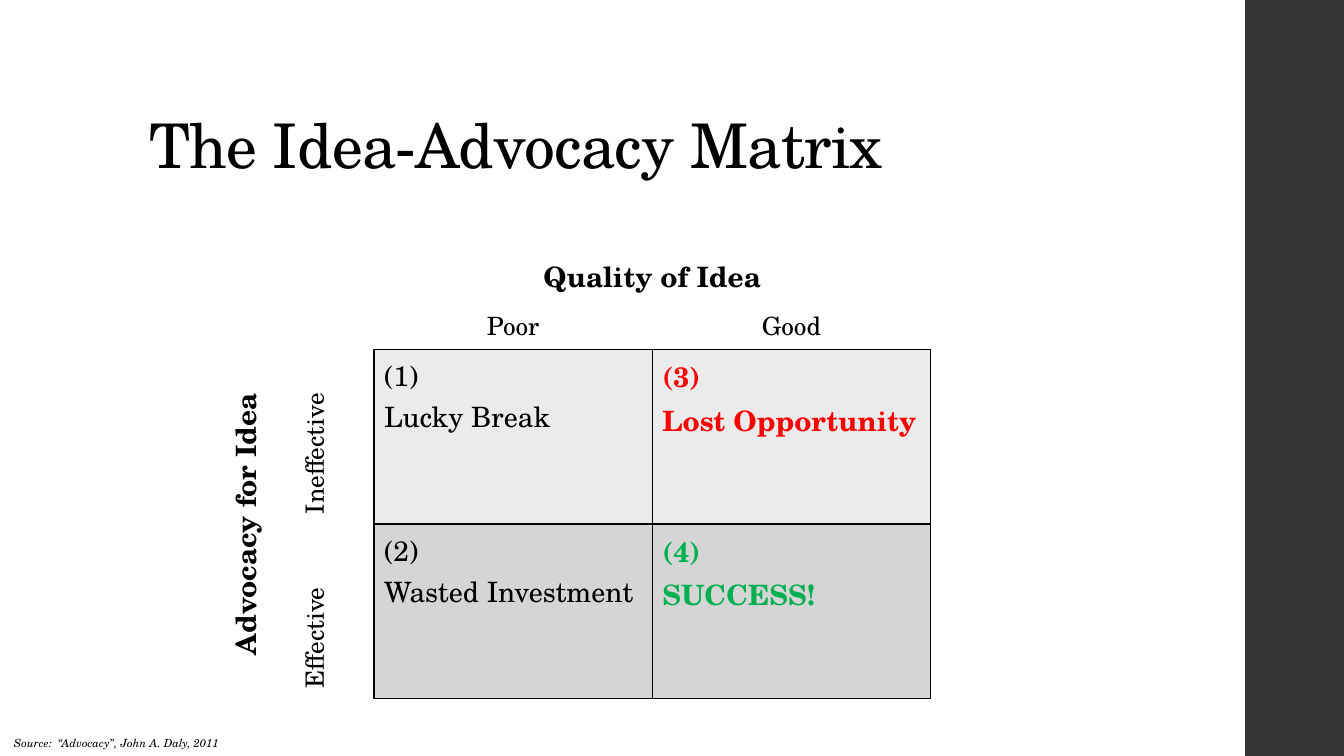
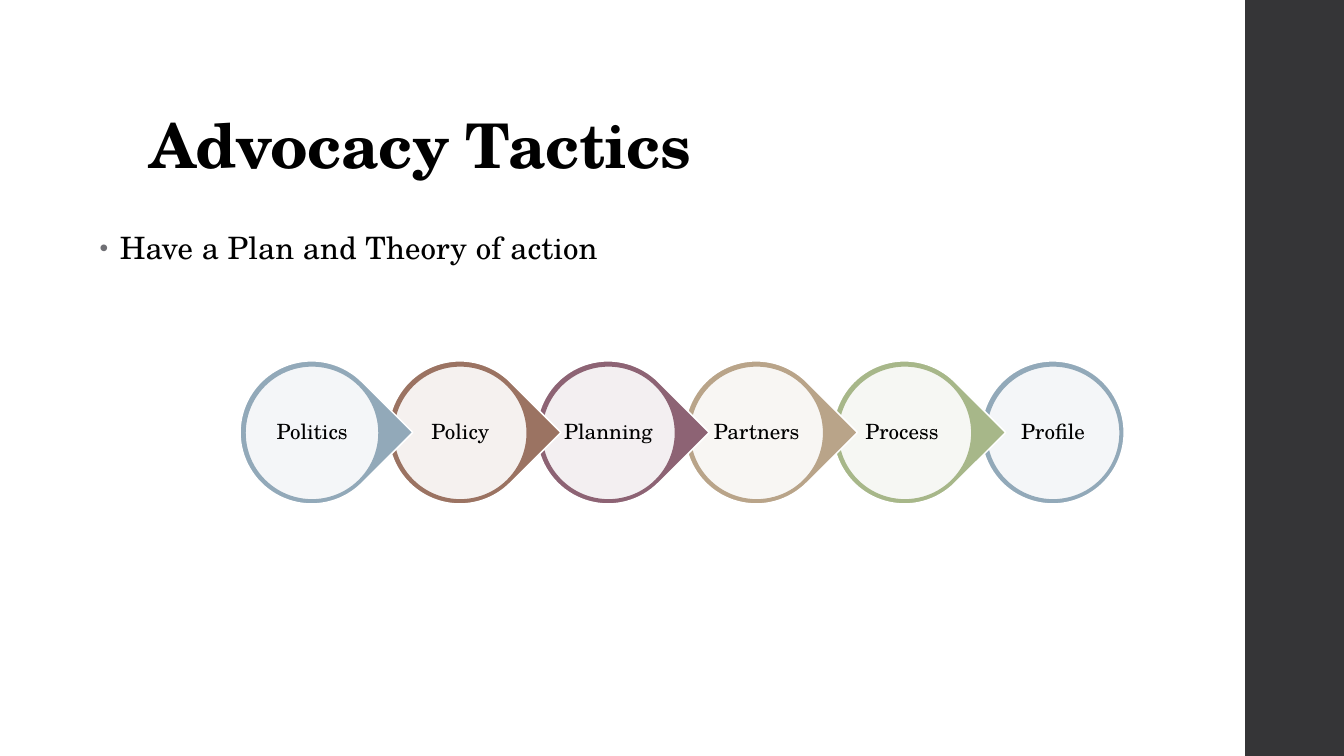
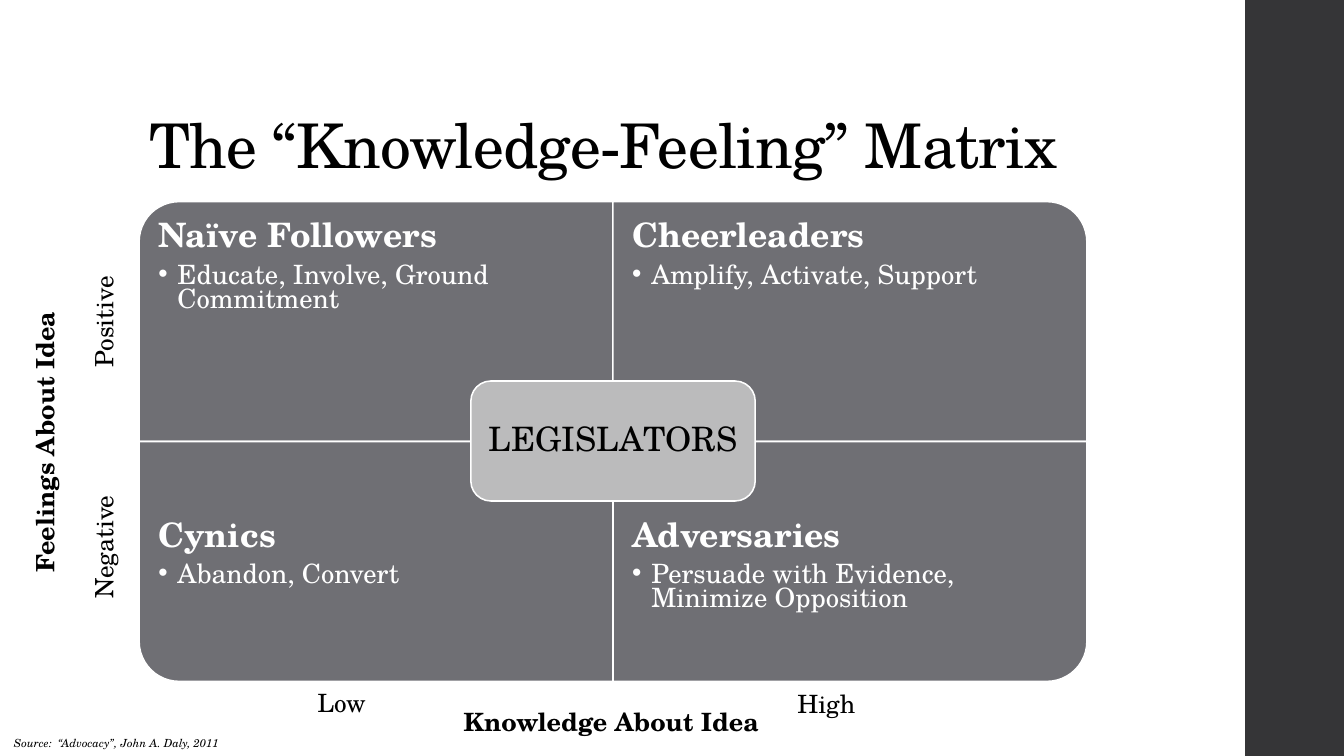
from pptx import Presentation
from pptx.dml.color import RGBColor
from pptx.enum.shapes import MSO_SHAPE as Preset
from pptx.enum.text import MSO_ANCHOR as Anchor, MSO_AUTO_SIZE as AutoSize, PP_ALIGN as Align
from pptx.oxml.ns import qn
from pptx.util import Inches, Pt
from lxml.etree import SubElement

FONT = "TeX Gyre Schola"
BLACK, WHITE, RED, GREEN = "000000", "FFFFFF", "FF0000", "00B050"
BAND, SLATE, SILVER = "353537", "6F6F74", "BBBBBC"
PALE_ROW, DARK_ROW = "EBEBEB", "D5D5D6"
BLUE, BROWN, PLUM, TAN, OLIVE = "92A9B9", "9B7362", "8D6374", "B9A489", "A7B789"
TITLE_BOX = (1.38, 0.4, 10.6, 1.45)
SOURCE_BOX = (0.04, 7.26, 2.27, 0.24)


def colour(value):
    return RGBColor.from_string(value)


def lengths(box):
    return [Inches(value) for value in box]


def add_span(para, text, size, ink=BLACK, bold=False, italic=False, tracking=0):
    span = para.add_run()
    span.text = text
    span.font.name = FONT
    span.font.size = Pt(size)
    span.font.bold = bold
    span.font.italic = italic
    span.font.color.rgb = colour(ink)
    if tracking:
        span._r.get_or_add_rPr().set("spc", str(round(tracking * 100)))
    return span


def add_bullet(para, indent, ink, percent=100):
    props = para._p.get_or_add_pPr()
    props.set("marL", str(Inches(indent)))
    props.set("indent", str(-Inches(indent)))
    SubElement(SubElement(props, qn("a:buClr")), qn("a:srgbClr"), val=ink)
    SubElement(props, qn("a:buSzPct"), val=str(percent * 1000))
    SubElement(props, qn("a:buFont"), typeface="Arial")
    SubElement(props, qn("a:buChar"), char="•")


def add_frame(page, box, anchor=Anchor.TOP, insets=(0.1, 0.05)):
    frame = page.shapes.add_textbox(*lengths(box)).text_frame
    frame.word_wrap = True
    frame.vertical_anchor = anchor
    frame.margin_left = frame.margin_right = Inches(insets[0])
    frame.margin_top = frame.margin_bottom = Inches(insets[1])
    return frame


def add_label(page, box, text, size=18, rotation=0, **style):
    label = page.shapes.add_textbox(*lengths(box))
    label.rotation = rotation
    label.text_frame.word_wrap = False
    label.text_frame.auto_size = AutoSize.SHAPE_TO_FIT_TEXT
    add_span(label.text_frame.paragraphs[0], text, size, **style)


def add_centred(page, box, text, size, inset):
    para = add_frame(page, box, Anchor.MIDDLE, (inset, inset)).paragraphs[0]
    para.alignment = Align.CENTER
    para.line_spacing = 0.9
    add_span(para, text, size)


def add_block(page, preset, box, fill, line=None, opacity=100, rotation=0):
    block = page.shapes.add_shape(preset, *lengths(box))
    block.shadow.inherit = False
    block.rotation = rotation
    block.fill.solid()
    block.fill.fore_color.rgb = colour(fill)
    if opacity < 100:
        shade = block._element.spPr.find(qn("a:solidFill"))[0]
        SubElement(shade, qn("a:alpha"), val=str(opacity * 1000))
    if line:
        block.line.color.rgb = colour(line)
        block.line.width = Pt(1.1)
    else:
        block.line.fill.background()
    return block


def add_page(deck, title, bold=False, source=None):
    page = deck.slides.add_slide(deck.slide_layouts[6])
    add_block(page, Preset.RECTANGLE, (12.35, 0, 0.98, 7.5), BAND)
    para = add_frame(page, TITLE_BOX, Anchor.BOTTOM).paragraphs[0]
    para.line_spacing = 0.9
    add_span(para, title, 44, bold=bold, tracking=-0.5)
    if source:
        add_label(page, SOURCE_BOX, source, 8, italic=True)
    return page


def set_borders(cell, row, col):
    inside = row >= 2 and col >= 2
    dark = {"R": row >= 2 and col == 1, "B": row == 1 and col >= 2}
    props = cell._tc.get_or_add_tcPr()
    for side in "LRTB":
        line = SubElement(props, qn("a:ln" + side), w=str(Pt(1)))
        ink = BLACK if inside or dark.get(side) else WHITE
        SubElement(SubElement(line, qn("a:solidFill")), qn("a:srgbClr"), val=ink)


def fill_cell(cell, lines, size, align=Align.LEFT, upright=False, **style):
    if upright:
        cell._tc.get_or_add_tcPr().set("vert", "vert270")
    frame = cell.text_frame
    for index, text in enumerate(lines):
        para = frame.add_paragraph() if index else frame.paragraphs[0]
        para.alignment = align
        add_span(para, text, size, **style)


def add_idea_table(page, left, top):
    widths, heights = (0.71, 0.83, 2.76, 2.76), (0.52, 0.47, 1.73, 1.73)
    box = (left, top, sum(widths), sum(heights))
    table = page.shapes.add_table(4, 4, *lengths(box)).table
    table.first_row = table.horz_banding = False
    for column, width in zip(table.columns, widths):
        column.width = Inches(width)
    for line, height in zip(table.rows, heights):
        line.height = Inches(height)
    for row in range(4):
        for col in range(4):
            cell = table.cell(row, col)
            set_borders(cell, row, col)
            if row >= 2 and col >= 2:
                cell.fill.solid()
                cell.fill.fore_color.rgb = colour(PALE_ROW if row == 2 else DARK_ROW)
            else:
                cell.fill.background()
    table.cell(0, 2).merge(table.cell(0, 3))
    table.cell(2, 0).merge(table.cell(3, 0))
    fill_cell(table.cell(0, 2), ["Quality of Idea"], 20, Align.CENTER, bold=True)
    fill_cell(table.cell(2, 0), ["Advocacy for Idea"], 20, Align.CENTER, True, bold=True)
    for offset, (quality, advocacy) in enumerate([("Poor", "Ineffective"), ("Good", "Effective")], 2):
        fill_cell(table.cell(1, offset), [quality], 18, Align.CENTER)
        fill_cell(table.cell(offset, 1), [advocacy], 18, upright=True)
    fill_cell(table.cell(2, 2), ["(1)", "Lucky Break"], 20)
    fill_cell(table.cell(3, 2), ["(2)", "Wasted Investment"], 20)
    fill_cell(table.cell(2, 3), ["(3)", "Lost Opportunity"], 20, ink=RED, bold=True)
    fill_cell(table.cell(3, 3), ["(4)", "SUCCESS!"], 20, ink=GREEN, bold=True)


def add_step(page, left, top, text, ink, last):
    preset, rotation = (Preset.OVAL, 0) if last else (Preset.TEAR, 45)
    add_block(page, preset, (left, top, 1.42, 1.42), ink, WHITE, rotation=rotation)
    add_block(page, Preset.OVAL, (left + 0.05, top + 0.05, 1.33, 1.33), WHITE, ink, 90)
    add_centred(page, (left + 0.24, top + 0.24, 0.95, 0.95), text, 15, 0.02)


def add_steps(page, left, top, pitch):
    steps = [("Politics", BLUE), ("Policy", BROWN), ("Planning", PLUM),
             ("Partners", TAN), ("Process ", OLIVE), ("Profile", BLUE)]
    final = len(steps) - 1
    for index in range(final, -1, -1):
        text, ink = steps[index]
        add_step(page, left + index * pitch, top, text, ink, index == final)


def add_quadrant(page, box, rotation, text_top, heading, advice):
    left, top, width, height = box
    if rotation % 180:
        box = (left + (width - height) / 2, top + (height - width) / 2, height, width)
    add_block(page, Preset.ROUND_1_RECTANGLE, box, SLATE, WHITE, rotation=rotation)
    frame = add_frame(page, (left, text_top, width, 1.78), insets=(0.19, 0.22))
    head = frame.paragraphs[0]
    add_span(head, heading, 24, WHITE, bold=True)
    item = frame.add_paragraph()
    add_bullet(item, 0.19, WHITE)
    add_span(item, advice, 19, WHITE)
    for para, gap in ((head, 8), (item, 3)):
        para.line_spacing = 0.75
        para.space_after = Pt(gap)


def add_feeling_matrix(page, left, top, width, height):
    quadrants = [
        (270, "Naïve Followers", "Educate, Involve, Ground Commitment"),
        (0, "Cheerleaders", "Amplify, Activate, Support"),
        (180, "Cynics", "Abandon, Convert"),
        (90, "Adversaries", "Persuade with Evidence, Minimize Opposition"),
    ]
    for index, (rotation, heading, advice) in enumerate(quadrants):
        row, col = divmod(index, 2)
        box = (left + col * width, top + row * height, width, height)
        add_quadrant(page, box, rotation, box[1] + row * 0.59, heading, advice)
    hub = (left + width - 1.41, top + height - 0.6, 2.82, 1.19)
    add_block(page, Preset.ROUNDED_RECTANGLE, hub, SILVER, WHITE)
    add_centred(page, hub, "LEGISLATORS", 24, 0.1)


def add_axes(page):
    add_label(page, (-0.97, 4.17, 2.82, 0.4), "Feelings About Idea", rotation=270, bold=True)
    add_label(page, (0.4, 5.21, 1.25, 0.4), "Negative", rotation=270)
    add_label(page, (0.46, 2.98, 1.13, 0.4), "Positive", rotation=270)
    add_label(page, (4.5, 6.96, 3.18, 0.4), "Knowledge About Idea", bold=True)
    add_label(page, (3.05, 6.77, 0.69, 0.4), "Low")
    add_label(page, (7.81, 6.78, 0.78, 0.4), "High")


def add_plan(page, box):
    para = add_frame(page, box).paragraphs[0]
    para.line_spacing = 0.95
    para.space_before = Pt(14)
    para.space_after = Pt(2)
    add_bullet(para, 0.2, SLATE, 80)
    add_span(para, "Have a Plan and Theory of action", 22, tracking=0.1)


def main():
    deck = Presentation()
    deck.slide_width, deck.slide_height = Inches(13.33), Inches(7.5)
    source = "Source:  “Advocacy”, John A. Daly, 2011"

    idea_page = add_page(deck, "The Idea-Advocacy Matrix", source=source)
    add_idea_table(idea_page, 2.17, 2.48)

    tactics_page = add_page(deck, "Advocacy Tactics", bold=True)
    add_plan(tactics_page, (0.89, 2.25, 11.4, 1.11))
    add_steps(tactics_page, 2.38, 3.58, 1.47)

    feeling_page = add_page(deck, "The “Knowledge-Feeling” Matrix", source=source)
    add_feeling_matrix(feeling_page, 1.38, 2, 4.7, 2.38)
    add_axes(feeling_page)

    deck.save("out.pptx")


if __name__ == "__main__":
    main()
